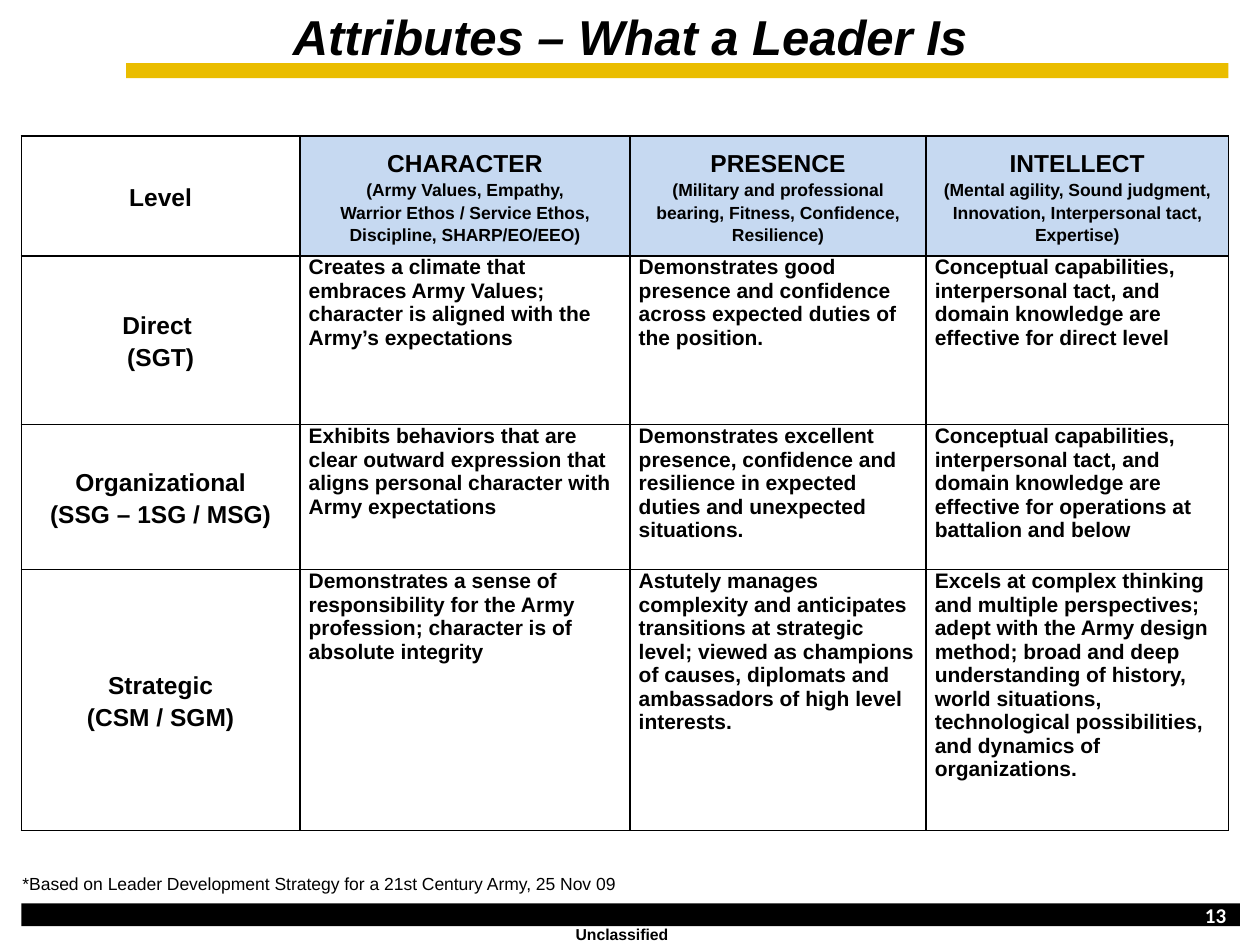
"""Build the leader attributes slide: a titled table of levels and attributes."""
from lxml import etree
from pptx import Presentation
from pptx import util as u
from pptx.dml.color import RGBColor
from pptx.enum import shapes, text
from pptx.oxml.ns import qn

BLACK, WHITE, GOLD, BLUE = "000000", "FFFFFF", "EABD00", "C6D9F1"
TITLE = "Attributes – What a Leader Is"
SOURCE = "*Based on Leader Development Strategy for a 21st Century Army, 25 Nov 09"
PAGE, MARKING = "13", "Unclassified"

HEADERS = [
    ["Level"],
    ["CHARACTER", "(Army Values, Empathy,",
     "Warrior Ethos / Service Ethos, Discipline, SHARP/EO/EEO)"],
    ["PRESENCE", "(Military and professional bearing, Fitness, Confidence, Resilience)"],
    ["INTELLECT", "(Mental agility, Sound judgment, Innovation, Interpersonal tact, Expertise)"],
]
LEVELS = [
    (["Direct ", "(SGT)"],
     "Creates a climate that embraces Army Values; character is aligned with the "
     "Army’s expectations",
     "Demonstrates good presence and confidence across expected duties of the position.",
     "Conceptual capabilities, interpersonal tact, and domain knowledge are effective "
     "for direct level"),
    (["Organizational", "(SSG – 1SG / MSG)"],
     "Exhibits behaviors that are clear outward expression that aligns personal "
     "character with Army expectations",
     "Demonstrates excellent presence, confidence and resilience in expected duties "
     "and unexpected situations.",
     "Conceptual capabilities, interpersonal tact, and domain knowledge are effective "
     "for operations at battalion and below"),
    (["Strategic", "(CSM / SGM)"],
     "Demonstrates a sense of responsibility for the Army profession; character is of "
     "absolute integrity",
     "Astutely manages complexity and anticipates transitions at strategic level; viewed "
     "as champions of causes, diplomats and ambassadors of high level interests.",
     "Excels at complex thinking and multiple perspectives; adept with the Army design "
     "method; broad and deep understanding of history, world situations, technological "
     "possibilities, and dynamics of organizations."),
]
COLUMNS = [2.21, 2.62, 2.35, 2.4]
ROWS = [0.95, 1.34, 1.15, 2.07]
LEFT, TOP = 0.17, 1.08


def color(value):
    return RGBColor.from_string(value)


def box(*lengths):
    return [u.Inches(length) for length in lengths]


def write(paragraph, words, size, bold=True, italic=False, font="Arial", ink=BLACK,
          align=text.PP_ALIGN.LEFT):
    paragraph.alignment = align
    run = paragraph.add_run()
    run.text = words
    run.font.name, run.font.size = font, u.Pt(size)
    run.font.bold, run.font.italic = bold, italic
    run.font.color.rgb = color(ink)


def add_bar(slide, place, fill):
    bar = slide.shapes.add_shape(shapes.MSO_SHAPE.RECTANGLE, *box(*place))
    bar.shadow.inherit = False
    bar.fill.solid()
    bar.fill.fore_color.rgb = color(fill)
    bar.line.fill.background()


def add_label(slide, place, words, size, wrap=True, anchor=text.MSO_ANCHOR.TOP, **style):
    frame = slide.shapes.add_textbox(*box(*place)).text_frame
    frame.word_wrap, frame.vertical_anchor = wrap, anchor
    write(frame.paragraphs[0], words, size, **style)


def outline(cell):
    properties = cell._tc.get_or_add_tcPr()
    for position, side in enumerate(("a:lnL", "a:lnR", "a:lnT", "a:lnB")):
        line = etree.Element(qn(side), w=str(u.Pt(1)))
        fill = etree.SubElement(line, qn("a:solidFill"))
        etree.SubElement(fill, qn("a:srgbClr"), val=BLACK)
        properties.insert(position, line)


def fill_cell(cell, lines, sizes, centered, fill):
    cell.margin_left = cell.margin_right = u.Inches(0.07)
    cell.margin_top = cell.margin_bottom = 0
    cell.vertical_anchor = text.MSO_ANCHOR.MIDDLE if centered else text.MSO_ANCHOR.TOP
    cell.fill.solid()
    cell.fill.fore_color.rgb = color(fill)
    outline(cell)
    frame = cell.text_frame
    for index, words in enumerate(lines):
        paragraph = frame.add_paragraph() if index else frame.paragraphs[0]
        if centered:
            paragraph.line_spacing = 1.15
        write(paragraph, words, sizes[min(index, len(sizes) - 1)],
              align=text.PP_ALIGN.CENTER if centered else text.PP_ALIGN.LEFT)


def add_matrix(slide):
    place = box(LEFT, TOP, sum(COLUMNS), sum(ROWS))
    table = slide.shapes.add_table(len(ROWS), len(COLUMNS), *place).table
    table.first_row = table.horz_banding = False
    for column, width in zip(table.columns, COLUMNS):
        column.width = u.Inches(width)
    for row, height in zip(table.rows, ROWS):
        row.height = u.Inches(height)
    for column, lines in enumerate(HEADERS):
        fill_cell(table.cell(0, column), lines, (14, 10), True, BLUE if column else WHITE)
    for row, (level, *descriptions) in enumerate(LEVELS, 1):
        fill_cell(table.cell(row, 0), level, (14,), True, WHITE)
        for column, description in enumerate(descriptions, 1):
            fill_cell(table.cell(row, column), [description], (12,), False, WHITE)


def main():
    presentation = Presentation()
    presentation.slide_width, presentation.slide_height = box(10, 7.5)
    slide = presentation.slides.add_slide(presentation.slide_layouts[5])

    title = slide.shapes.title
    title.left, title.top, title.width, title.height = box(0, 0, 10, 0.57)
    title.text_frame.auto_size = text.MSO_AUTO_SIZE.NONE
    title.text_frame.vertical_anchor = text.MSO_ANCHOR.TOP
    write(title.text_frame.paragraphs[0], TITLE, 28, italic=True, align=text.PP_ALIGN.CENTER)

    add_bar(slide, (1, 0.5, 8.75, 0.12), GOLD)
    add_bar(slide, (LEFT, 7.17, 9.67, 0.18), BLACK)
    add_label(slide, (7.5, 7.05, 2.33, 0.42), PAGE, 12, anchor=text.MSO_ANCHOR.MIDDLE,
              font="Calibri", ink=WHITE, align=text.PP_ALIGN.RIGHT)
    add_label(slide, (4.47, 7.29, 0.97, 0.25), MARKING, 9, wrap=False)
    add_matrix(slide)
    add_label(slide, (0.08, 6.88, 5.5, 0.27), SOURCE, 10, bold=False)
    presentation.save("out.pptx")


if __name__ == "__main__":
    main()
